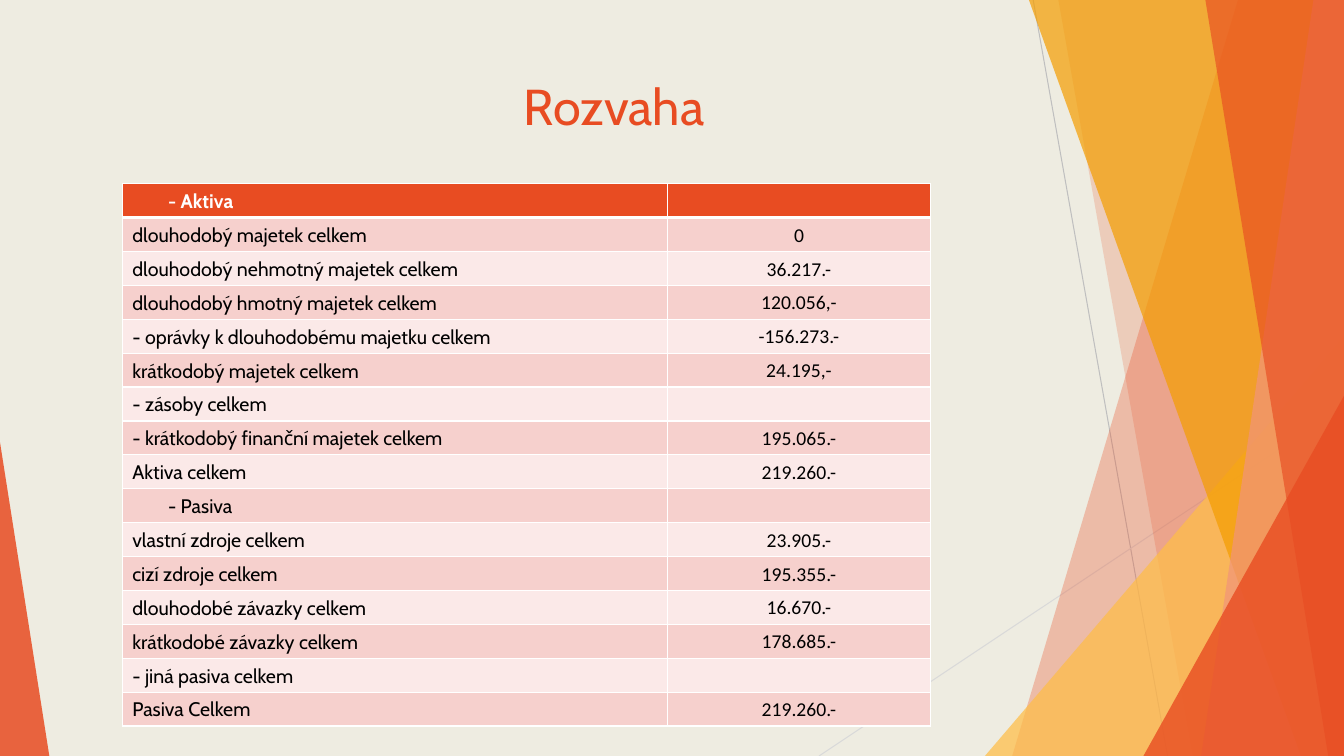
from dataclasses import dataclass

from lxml.etree import SubElement
from pptx import Presentation
from pptx.dml.color import RGBColor
from pptx.enum.shapes import MSO_CONNECTOR as Connector, MSO_SHAPE as Shape
from pptx.enum.text import MSO_ANCHOR as Anchor, PP_ALIGN as Align
from pptx.oxml.ns import qn
from pptx.util import Pt

PX = 9525  # EMU in one px, so the slide is 1280 by 720
WIDTH, HEIGHT = 1280, 720


@dataclass(frozen=True)
class Theme:
    background: str = "EEECE1"
    accent: str = "E84C22"
    salmon: str = "F1947A"
    amber: str = "F49D00"
    yellow: str = "FFBD47"
    gray: str = "BFBFBF"
    light_gray: str = "D9D9D9"
    white: str = "FFFFFF"
    black: str = "000000"
    bands: tuple = ("FBE9E8", "F6D0CD")
    label_font: str = "Cabin"
    value_font: str = "Calibri"
    title_size: int = 36
    table_size: int = 14


THEME = Theme()

SECTIONS = ("- Aktiva", "- Pasiva")
BALANCE = [
    ("- Aktiva", ""),
    ("dlouhodobý majetek celkem", "0"),
    ("dlouhodobý nehmotný majetek celkem", "36.217.-"),
    ("dlouhodobý hmotný majetek celkem", "120.056,-"),
    ("- oprávky k dlouhodobému majetku celkem", "-156.273.-"),
    ("krátkodobý majetek celkem", "24.195,-"),
    ("- zásoby celkem", ""),
    ("- krátkodobý finanční majetek celkem", "195.065.-"),
    ("Aktiva celkem", "219.260.-"),
    ("- Pasiva", ""),
    ("vlastní zdroje celkem", "23.905.-"),
    ("cizí zdroje celkem", "195.355.-"),
    ("dlouhodobé závazky celkem", "16.670.-"),
    ("krátkodobé závazky celkem", "178.685.-"),
    ("- jiná pasiva celkem", ""),
    ("Pasiva Celkem", "219.260.-"),
]


def rgb(color):
    return RGBColor.from_string(color)


def add_line(slide, start, end, color):
    line = slide.shapes.add_connector(
        Connector.STRAIGHT, *(length * PX for length in (*start, *end)))
    line.line.color.rgb = rgb(color)
    line.line.width = Pt(0.75)
    SubElement(line._element.spPr, qn("a:effectLst"))


def paint(shape, color, opacity):
    """Flat translucent fill without outline or shadow."""
    shape.shadow.inherit = False
    shape.line.fill.background()
    shape.fill.solid()
    shape.fill.fore_color.rgb = rgb(color)
    tint = shape._element.spPr.find(".//" + qn("a:srgbClr"))
    SubElement(tint, qn("a:alpha"), val=str(opacity * 1000))


def add_ribbon(slide, top_x, bottom_x, color, opacity):
    """Full-height band from a slanted left edge to the slide's right edge."""
    builder = slide.shapes.build_freeform(top_x, 0, scale=PX)
    builder.add_line_segments(
        [(WIDTH, 0), (WIDTH, HEIGHT), (bottom_x, HEIGHT)], close=True)
    paint(builder.convert_to_shape(), color, opacity)


def add_triangle(slide, left, top, width, apex, color, opacity):
    """Triangle standing on the slide's bottom edge."""
    triangle = slide.shapes.add_shape(
        Shape.ISOSCELES_TRIANGLE, left * PX, top * PX, width * PX, (HEIGHT - top) * PX)
    triangle.adjustments[0] = apex
    paint(triangle, color, opacity)


def add_run(paragraph, text, font, size, color, bold=False):
    run = paragraph.add_run()
    run.text = text
    run.font.name = font
    run.font.size = Pt(size)
    run.font.bold = bold
    run.font.color.rgb = rgb(color)


def add_decoration(slide):
    add_line(slide, (984, 0), (1112, HEIGHT), THEME.gray)
    add_line(slide, (WIDTH, 387), (780, HEIGHT), THEME.light_gray)
    add_ribbon(slide, 1179, 964, THEME.accent, 30)
    add_ribbon(slide, 1008, 1136, THEME.accent, 20)
    add_triangle(slide, 938, 320, 342, 1, THEME.yellow, 72)
    add_ribbon(slide, 980, 1239, THEME.amber, 70)
    add_ribbon(slide, 1251, 1144, THEME.salmon, 70)
    add_ribbon(slide, 1148, 1265, THEME.accent, 65)
    add_triangle(slide, 1089, 377, 191, 1, THEME.accent, 80)
    add_triangle(slide, 0, 421, 47, 0, THEME.accent, 85)


def set_title(slide, text):
    title = slide.shapes.title
    title.left, title.top, title.width, title.height = (
        length * PX for length in (123, 67, 924, 136))
    title.text_frame.vertical_anchor = Anchor.TOP
    paragraph = title.text_frame.paragraphs[0]
    paragraph.alignment = Align.CENTER
    add_run(paragraph, text, THEME.label_font, THEME.title_size, THEME.accent)


def set_borders(cell, top, bottom):
    properties = cell._tc.get_or_add_tcPr()
    for side, points in (("L", 1), ("R", 1), ("T", top), ("B", bottom)):
        border = SubElement(properties, qn(f"a:ln{side}"), w=str(Pt(points)))
        fill = SubElement(border, qn("a:solidFill"))
        SubElement(fill, qn("a:srgbClr"), val=THEME.white)


def fill_cell(cell, text, row, is_value):
    header = row == 0
    # The rule under the header is the only thick one
    set_borders(cell, top=3 if row == 1 else 1, bottom=3 if header else 1)
    cell.fill.solid()
    cell.fill.fore_color.rgb = rgb(THEME.accent if header else THEME.bands[row % 2])
    cell.margin_left = cell.margin_right = 9 * PX
    cell.margin_top = cell.margin_bottom = 4 * PX

    paragraph = cell.text_frame.paragraphs[0]
    paragraph.alignment = Align.CENTER if is_value else Align.LEFT
    paragraph.line_spacing = 1.07
    paragraph.space_after = Pt(8)
    if text in SECTIONS:
        paragraph._p.get_or_add_pPr().set("marL", str(34 * PX))
    if text:
        font = THEME.value_font if is_value else THEME.label_font
        color = THEME.white if header else THEME.black
        add_run(paragraph, text, font, THEME.table_size, color, header)
    else:
        # Keeps an empty cell as low as its neighbours
        SubElement(paragraph._p, qn("a:endParaRPr"), sz=str(THEME.table_size * 100))


def add_balance_table(slide):
    row_height, column_widths = 29, (519, 250)
    table = slide.shapes.add_table(
        len(BALANCE), len(column_widths), 117 * PX, 175 * PX,
        sum(column_widths) * PX, len(BALANCE) * row_height * PX).table
    for column, width in zip(table.columns, column_widths):
        column.width = width * PX
    for row, texts in enumerate(BALANCE):
        for column, text in enumerate(texts):
            fill_cell(table.cell(row, column), text, row, is_value=column == 1)


def main():
    presentation = Presentation()
    presentation.slide_width = WIDTH * PX
    presentation.slide_height = HEIGHT * PX
    slide = presentation.slides.add_slide(presentation.slide_layouts[5])
    slide.background.fill.solid()
    slide.background.fill.fore_color.rgb = rgb(THEME.background)

    add_decoration(slide)
    set_title(slide, "Rozvaha")
    add_balance_table(slide)
    presentation.save("out.pptx")


if __name__ == "__main__":
    main()
